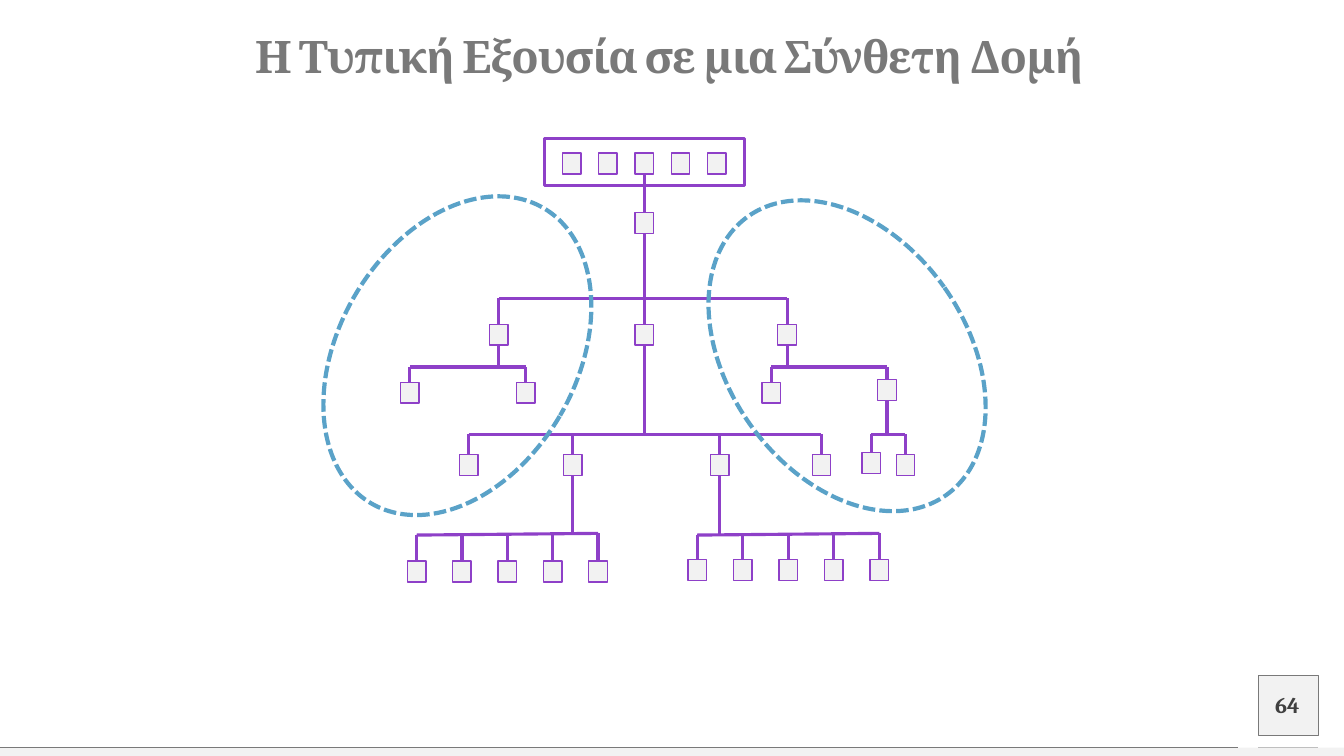
import dataclasses
import typing

import lxml.etree
import pptx
import pptx.dml.color
import pptx.enum.dml
import pptx.enum.shapes
import pptx.enum.text
import pptx.oxml.ns
import pptx.util

# The slide is laid out on a grid of 160 columns by 90 rows
COLUMNS, ROWS = 160, 90
SLIDE_WIDTH, SLIDE_HEIGHT = pptx.util.Inches(13.33), pptx.util.Inches(7.5)
BOX_WIDTH, BOX_HEIGHT = 2.2, 2.5
TOP, BOTTOM = 0, 2
RECTANGLE = pptx.enum.shapes.MSO_SHAPE.RECTANGLE


@dataclasses.dataclass(frozen=True)
class Theme:
    font: str = "Cambria"
    title_size: float = 32
    number_size: float = 16
    title: str = "797979"
    number: str = "404040"
    paper: str = "FFFFFF"
    panel: str = "F2F2F2"
    rule: str = "BFBFBF"
    chart: str = "8E40C8"
    group: str = "5AA2C8"
    thin: float = 0.25
    outline: float = 1
    link: float = 2.25
    dashes: float = 3


THEME = Theme()


@dataclasses.dataclass(frozen=True)
class Box:
    """A position in the organisation: its centre column and top row."""
    center: float
    top: float

    @property
    def bottom(self) -> float:
        return self.top + BOX_HEIGHT


@dataclasses.dataclass(frozen=True)
class Branch:
    """A parent and its children, hung from a bar between two rows."""
    parent: Box
    children: tuple[Box, ...]
    bar_start: float
    bar_end: float

    def bar_row(self, column: float) -> float:
        first, last = self.children[0].center, self.children[-1].center
        share = (column - first) / (last - first)
        return self.bar_start + share * (self.bar_end - self.bar_start)


def row_of_boxes(first: float, step: float, top: float) -> tuple[Box, ...]:
    return tuple(Box(first + step * index, top) for index in range(5))


# Positions, from the board down
BOARD = row_of_boxes(68.06, 4.32, 18.2)
CHAIR = Box(76.7, 25.3)
LEFT, MIDDLE, RIGHT = (Box(center, 38.6) for center in (59.4, 76.7, 93.7))
LEFT_UNITS = (Box(48.8, 45.5), Box(62.6, 45.5))
RIGHT_UNITS = (Box(91.8, 45.5), Box(105.6, 45.2))
RIGHT_TEAMS = (Box(103.7, 53.9), Box(107.8, 54.1))
MIDDLE_UNITS = tuple(Box(center, 54.1) for center in (55.8, 68.2, 85.7, 97.8))
LEFT_STAFF = row_of_boxes(49.6, 5.4, 66.8)
RIGHT_STAFF = row_of_boxes(83, 5.42, 66.6)

BRANCHES = (
    Branch(CHAIR, (LEFT, MIDDLE, RIGHT), 35.5, 35.5),
    Branch(LEFT, LEFT_UNITS, 43.7, 43.7),
    Branch(RIGHT, RIGHT_UNITS, 43.7, 43.7),
    Branch(RIGHT_UNITS[1], RIGHT_TEAMS, 51.7, 51.7),
    Branch(MIDDLE, MIDDLE_UNITS, 51.7, 51.7),
    Branch(MIDDLE_UNITS[1], LEFT_STAFF, 63.7, 63.5),
    Branch(MIDDLE_UNITS[2], RIGHT_STAFF, 63.7, 63.5),
)


def across(columns: float) -> int:
    return round(SLIDE_WIDTH * columns / COLUMNS)


def down(rows: float) -> int:
    return round(SLIDE_HEIGHT * rows / ROWS)


def color(code: str) -> pptx.dml.color.RGBColor:
    return pptx.dml.color.RGBColor.from_string(code)


def place(left: float, top: float, width: float, height: float) -> tuple[int, int, int, int]:
    return across(left), down(top), across(width), down(height)


def add_figure(slide, kind, area: tuple[int, int, int, int], fill: typing.Optional[str] = None,
               line: typing.Optional[str] = None, line_width: float = THEME.outline):
    shape = slide.shapes.add_shape(kind, *area)
    shape.shadow.inherit = False
    if fill:
        shape.fill.solid()
        shape.fill.fore_color.rgb = color(fill)
    else:
        shape.fill.background()
    if line:
        shape.line.color.rgb = color(line)
        shape.line.width = pptx.util.Pt(line_width)
    else:
        shape.line.fill.background()
    return shape


def add_link(slide, start: tuple[float, float], end: tuple[float, float], start_shape=None,
             end_shape=None, line: str = THEME.chart, line_width: float = THEME.link) -> None:
    connector = slide.shapes.add_connector(
        pptx.enum.shapes.MSO_CONNECTOR.STRAIGHT,
        across(start[0]), down(start[1]), across(end[0]), down(end[1]))
    connector.line.color.rgb = color(line)
    connector.line.width = pptx.util.Pt(line_width)
    lxml.etree.SubElement(connector._element.spPr, pptx.oxml.ns.qn("a:effectLst"))
    if start_shape is not None:
        connector.begin_connect(start_shape, BOTTOM)
    if end_shape is not None:
        connector.end_connect(end_shape, TOP)


def write_text(shape, text: str, *, size: float, ink: str, line_spacing: float = 1,
               tracking: int = 0) -> None:
    frame = shape.text_frame
    frame.word_wrap = True
    frame.auto_size = pptx.enum.text.MSO_AUTO_SIZE.NONE
    frame.vertical_anchor = pptx.enum.text.MSO_ANCHOR.MIDDLE
    frame.margin_left = frame.margin_right = frame.margin_top = frame.margin_bottom = 0
    paragraph = frame.paragraphs[0]
    paragraph.alignment = pptx.enum.text.PP_ALIGN.CENTER
    paragraph.line_spacing = line_spacing
    run = paragraph.add_run()
    run.text = text
    run.font.name, run.font.size, run.font.bold = THEME.font, pptx.util.Pt(size), True
    run.font.color.rgb = color(ink)
    if tracking:
        run._r.get_or_add_rPr().set("spc", str(tracking))


def draw_branch(slide, branch: Branch, shapes: dict) -> None:
    parent, children = branch.parent, branch.children
    first, last = children[0].center, children[-1].center
    add_link(slide, (first, branch.bar_start), (last, branch.bar_end))
    below_parent = (parent.center, parent.bottom)
    if all(child.center != parent.center for child in children):
        add_link(slide, below_parent, (parent.center, branch.bar_row(parent.center)),
                 start_shape=shapes[parent])
    for child in children:
        above_child = (child.center, child.top)
        if child.center == parent.center:
            add_link(slide, below_parent, above_child, shapes[parent], shapes[child])
        else:
            add_link(slide, (child.center, branch.bar_row(child.center)), above_child,
                     end_shape=shapes[child])


def main() -> None:
    presentation = pptx.Presentation()
    presentation.slide_width, presentation.slide_height = SLIDE_WIDTH, SLIDE_HEIGHT
    slide = presentation.slides.add_slide(presentation.slide_layouts[5])

    # Title
    title = slide.shapes.title
    title.left, title.top, title.width, title.height = place(5.3, 4.2, 148.8, 5.6)
    write_text(title, "Η Τυπική Εξουσία σε μια Σύνθετη Δομή", size=THEME.title_size,
               ink=THEME.title, line_spacing=0.9, tracking=-100)

    # Footer strip and slide number
    add_figure(slide, RECTANGLE, place(149.8, 80.4, 7.1, 7.1), THEME.panel, THEME.title, THEME.thin)
    add_figure(slide, RECTANGLE, place(0, 89, COLUMNS, 1), THEME.panel)
    add_link(slide, (149.8, 89), (156.9, 89), line=THEME.rule, line_width=0.5)
    add_link(slide, (0, 89), (147.4, 89), line=THEME.title, line_width=THEME.thin)
    number = slide.shapes.add_textbox(*place(149.7, 81.5, 7.1, 4.8))
    write_text(number, "64", size=THEME.number_size, ink=THEME.number)

    # Board frame and all positions
    add_figure(slide, RECTANGLE, place(64.8, 16.5, 23.8, 5.6), THEME.paper, THEME.chart, THEME.link)
    staff = [CHAIR, *BOARD, *(child for branch in BRANCHES for child in branch.children)]
    shapes = {
        box: add_figure(slide, RECTANGLE,
                        place(box.center - BOX_WIDTH / 2, box.top, BOX_WIDTH, BOX_HEIGHT),
                        THEME.panel, THEME.chart)
        for box in staff}

    # Lines of authority
    head = BOARD[2]
    add_link(slide, (head.center, head.bottom), (CHAIR.center, CHAIR.top),
             shapes[head], shapes[CHAIR])
    for branch in BRANCHES:
        draw_branch(slide, branch, shapes)

    # Dashed ovals around the two side groups
    for left, rotation in ((86.7, 324.6), (40.3, 30.2)):
        oval = add_figure(slide, pptx.enum.shapes.MSO_SHAPE.ARC, place(left, 22, 28.3, 40.7),
                          line=THEME.group, line_width=THEME.dashes)
        oval.adjustments[0], oval.adjustments[1] = 0.24, 0
        oval.rotation = rotation
        oval.line.dash_style = pptx.enum.dml.MSO_LINE.SQUARE_DOT

    presentation.save("out.pptx")


if __name__ == "__main__":
    main()
